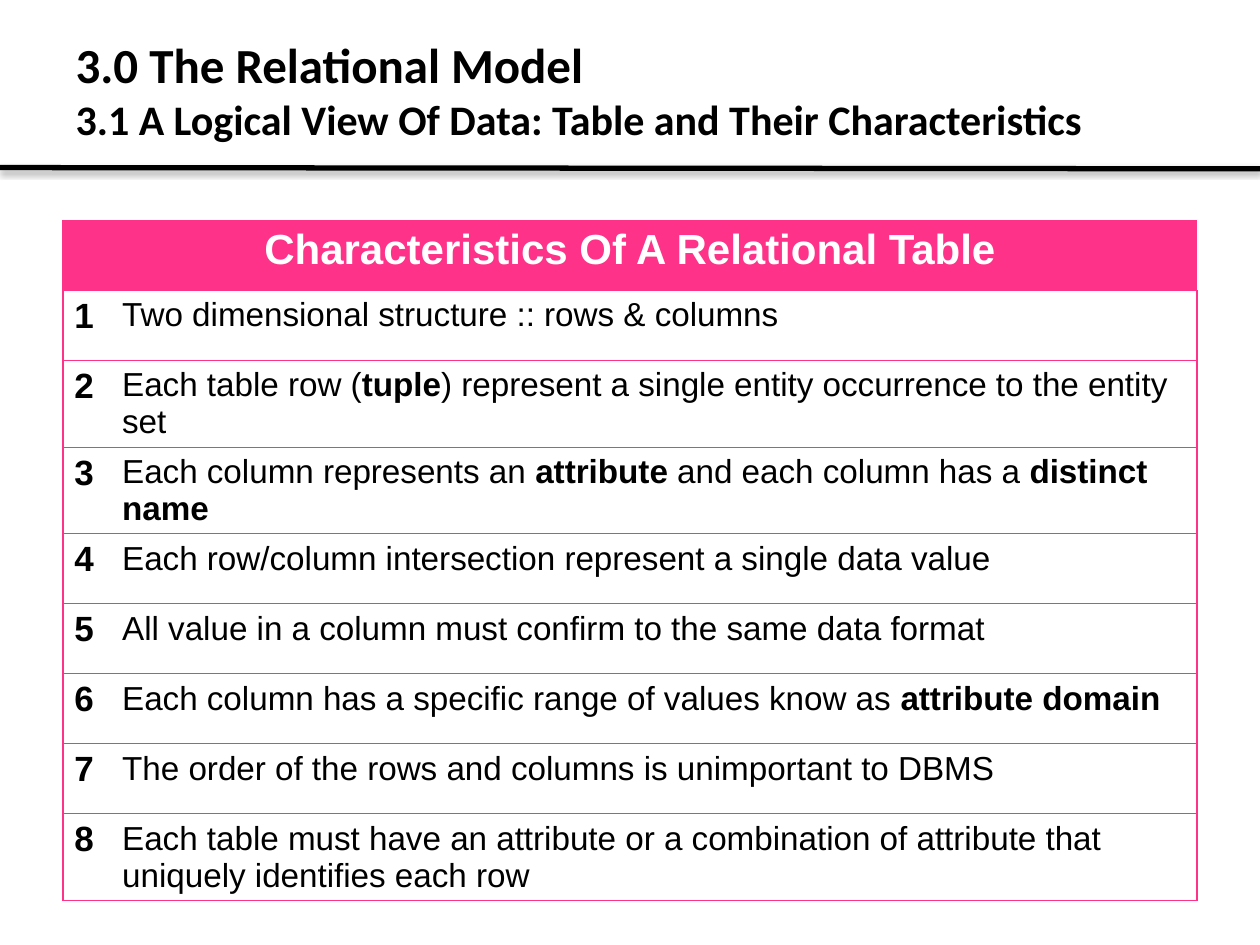
from dataclasses import dataclass

from lxml import etree
from pptx import Presentation
from pptx.dml.color import RGBColor
from pptx.enum.shapes import MSO_CONNECTOR
from pptx.enum.text import MSO_ANCHOR, PP_ALIGN
from pptx.oxml.ns import qn
from pptx.util import Inches, Pt

STRAIGHT = MSO_CONNECTOR.STRAIGHT
LEFT, CENTER = PP_ALIGN.LEFT, PP_ALIGN.CENTER
MIDDLE, TOP = MSO_ANCHOR.MIDDLE, MSO_ANCHOR.TOP

BLACK, WHITE, PINK = "000000", "FFFFFF", "FE3288"
ROW_HEIGHT = 0.556


@dataclass(frozen=True)
class Words:
    text: str
    bold: bool = False


CHARACTERISTICS = [
    [Words("Two dimensional structure :: rows & columns")],
    [Words("Each table row ("), Words("tuple", True),
     Words(") represent a single entity occurrence to the entity set")],
    [Words("Each column represents an "), Words("attribute", True),
     Words(" and each column has a "), Words("distinct name", True)],
    [Words("Each row/column intersection represent a single data value")],
    [Words("All value in a column must confirm to the same data format")],
    [Words("Each column has a specific range of values know as "),
     Words("attribute domain", True)],
    [Words("The order of the rows and columns is unimportant to DBMS")],
    [Words("Each table must have an attribute or a combination of attribute "
           "that uniquely identifies each row")],
]


def rgb(color: str) -> RGBColor:
    return RGBColor.from_string(color)


def add_words(paragraph, words: Words, size: float, font: str, color: str) -> None:
    run = paragraph.add_run()
    run.text = words.text
    run.font.name = font
    run.font.size = Pt(size)
    run.font.bold = words.bold
    run.font.color.rgb = rgb(color)


def add_title(slide) -> None:
    title = slide.shapes.title
    title.left, title.top = Inches(0.5), Inches(0.17)
    title.width, title.height = Inches(9), Inches(1.08)
    title.text_frame.vertical_anchor = MIDDLE
    paragraph = title.text_frame.paragraphs[0]
    paragraph.alignment = LEFT
    add_words(paragraph, Words("3.0 The Relational Model", True), 28, "Calibri", BLACK)
    paragraph.add_line_break()
    subtitle = "3.1 A Logical View Of Data: Table and Their Characteristics"
    add_words(paragraph, Words(subtitle, True), 24, "Calibri", BLACK)


def add_rule(slide) -> None:
    """Draw the heavy line under the title, with its soft shadow below."""
    rule = slide.shapes.add_connector(
        STRAIGHT, Inches(0), Inches(1.33), Inches(10), Inches(1.34))
    rule.line.color.rgb = rgb(BLACK)
    rule.line.width = Pt(3)
    effects = etree.SubElement(rule._element.spPr, qn("a:effectLst"))
    shadow = etree.SubElement(
        effects, qn("a:outerShdw"), blurRad=str(Pt(3.1)), dist=str(Pt(1.8)),
        dir="5400000", rotWithShape="0")
    shade = etree.SubElement(shadow, qn("a:srgbClr"), val=BLACK)
    etree.SubElement(shade, qn("a:alpha"), val="35000")


def set_borders(cell, sides: str) -> None:
    """Rule the sides named in a string of L, R, T and B; clear the others."""
    properties = cell._tc.get_or_add_tcPr()
    for side in "LRTB":
        border = etree.SubElement(properties, qn(f"a:ln{side}"), w=str(Pt(0.75)))
        if side in sides:
            fill = etree.SubElement(border, qn("a:solidFill"))
            etree.SubElement(fill, qn("a:srgbClr"), val=PINK)
        else:
            etree.SubElement(border, qn("a:noFill"))


def fill_cell(cell, content: list[Words], size: float, color: str = BLACK) -> None:
    cell.vertical_anchor = TOP
    cell.margin_left = cell.margin_right = Inches(0.09)
    cell.margin_top = cell.margin_bottom = Inches(0.05)
    for words in content:
        add_words(cell.text_frame.paragraphs[0], words, size, "Arial", color)


def add_characteristics(slide) -> None:
    row_count = len(CHARACTERISTICS) + 1
    table = slide.shapes.add_table(
        row_count, 2, Inches(0.5), Inches(1.75), Inches(9),
        Inches(ROW_HEIGHT * row_count)).table
    table.first_row = table.horz_banding = False
    for column, width in zip(table.columns, (0.38, 8.62)):
        column.width = Inches(width)

    for row in table.rows:
        row.height = Inches(ROW_HEIGHT)
        for cell, sides in zip(row.cells, ("LTB", "RTB")):
            set_borders(cell, sides)
            cell.fill.background()

    header = table.cell(0, 0)
    header.merge(table.cell(0, 1))
    header.fill.solid()
    header.fill.fore_color.rgb = rgb(PINK)
    fill_cell(header, [Words("Characteristics Of A Relational Table", True)], 24, WHITE)
    header.text_frame.paragraphs[0].alignment = CENTER

    for number, content in enumerate(CHARACTERISTICS, start=1):
        fill_cell(table.cell(number, 0), [Words(str(number), True)], 20)
        fill_cell(table.cell(number, 1), content, 19)


def main() -> None:
    presentation = Presentation()
    presentation.slide_width, presentation.slide_height = Inches(10), Inches(7.5)
    title_only = presentation.slide_layouts[5]
    slide = presentation.slides.add_slide(title_only)
    add_rule(slide)
    add_title(slide)
    add_characteristics(slide)
    presentation.save("out.pptx")


if __name__ == "__main__":
    main()
